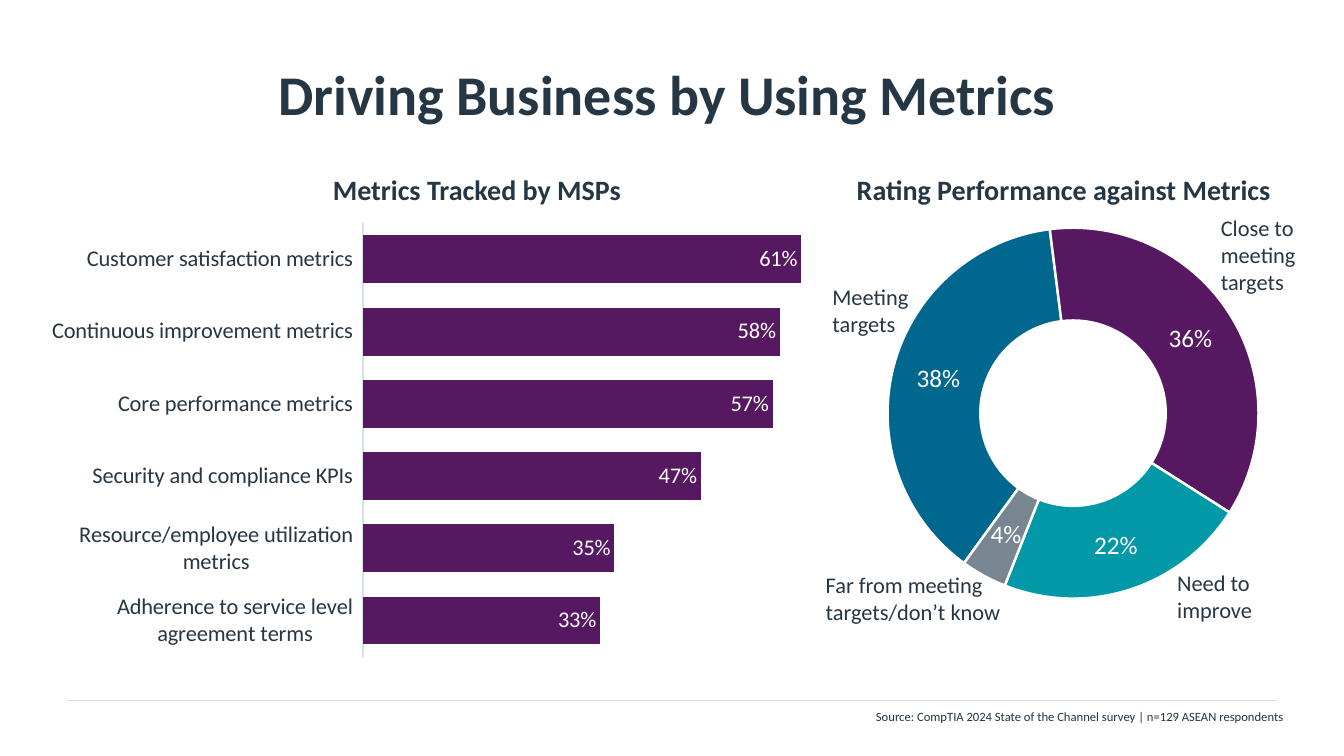
from lxml.etree import SubElement
from pptx import Presentation
from pptx.chart.data import CategoryChartData
from pptx.dml.color import RGBColor
from pptx.enum.chart import XL_CHART_TYPE as CT, XL_LABEL_POSITION as LP, XL_TICK_LABEL_POSITION as TLP
from pptx.enum.chart import XL_TICK_MARK as TM
from pptx.enum.shapes import MSO_CONNECTOR as CONN
from pptx.enum.text import MSO_ANCHOR as ANCHOR, PP_ALIGN as ALIGN
from pptx.oxml.ns import qn
from pptx.util import Inches, Pt

W, H = Inches(13.33), Inches(7.5)
FONT = "Calibri"
INK = RGBColor(0x25, 0x36, 0x44)
PAPER = RGBColor(0xFE, 0xFF, 0xFE)
RULE = RGBColor(0xDA, 0xDF, 0xE1)
AXIS = RGBColor(0xD8, 0xE1, 0xEA)
BAR = RGBColor(0x56, 0x19, 0x61)
BLUE = RGBColor(0x00, 0x68, 0x8E)
PURPLE = RGBColor(0x56, 0x18, 0x61)
TEAL = RGBColor(0x01, 0x98, 0xA7)
GREY = RGBColor(0x77, 0x86, 0x91)

METRICS = {
    "Adherence to service level agreement terms": 0.33,
    "Resource/employee utilization metrics": 0.35,
    "Security and compliance KPIs": 0.47,
    "Core performance metrics": 0.57,
    "Continuous improvement metrics": 0.58,
    "Customer satisfaction metrics": 0.61,
}
# rating, share, slice colour, label box
RATINGS = [
    ("Meeting targets", 0.38, BLUE, (61.2, 36.8, 8.2, 8.53)),
    ("Close to meeting targets", 0.36, PURPLE, (90.1, 27.73, 9.9, 12.13)),
    ("Need to improve", 0.22, TEAL, (86.85, 74.67, 8.2, 8.53)),
    ("Far from meeting targets/don’t know", 0.04, GREY, (60.7, 74.93, 15.6, 8.53)),
]
HEADINGS = {"Metrics Tracked by MSPs": 15.83, "Rating Performance against Metrics": 59.5}


def place(x, y, w, h):
    """Turn percentages of the slide's width and height into lengths."""
    return int(W * x / 100), int(H * y / 100), int(W * w / 100), int(H * h / 100)


def style_font(font, size, color=INK, bold=False):
    for name, value in {"name": FONT, "size": Pt(size), "bold": bold}.items():
        setattr(font, name, value)
    font.color.rgb = color


def add_text(s, text, box, size, align=ALIGN.LEFT, bold=False, **frame):
    tf = s.shapes.add_textbox(*place(*box)).text_frame
    for name, value in {"word_wrap": True, **frame}.items():
        setattr(tf, name, value)
    p = tf.paragraphs[0]
    p.alignment = align
    r = p.add_run()
    r.text = text
    style_font(r.font, size, bold=bold)


def add_rule(s, x1, x2, y):
    left, top, width, _ = place(x1, y, x2 - x1, 0)
    line = s.shapes.add_connector(CONN.STRAIGHT, left, top, left + width, top)
    line.line.color.rgb = RULE
    line.line.width = Pt(0.5)
    SubElement(line._element.spPr, qn("a:effectLst"))


def set_plot_area(chart, x, y, w, h):
    """Fix the inner plot area as shares of the chart."""
    area = chart._chartSpace.chart.plotArea
    for old in area.findall(qn("c:layout")):
        area.remove(old)
    layout = SubElement(area, qn("c:layout"))
    area.insert(0, layout)
    manual = SubElement(layout, qn("c:manualLayout"))
    values = {"layoutTarget": "inner", "xMode": "edge", "yMode": "edge", "x": x, "y": y, "w": w, "h": h}
    for tag, value in values.items():
        SubElement(manual, qn(f"c:{tag}")).set("val", str(value))


def add_percent_chart(s, kind, box, names, values, size, label_size, plot_area):
    data = CategoryChartData(number_format="0%")
    data.categories = names
    data.add_series("Share", values)
    chart = s.shapes.add_chart(kind, *place(*box), data).chart
    chart.has_legend = chart.has_title = False
    style_font(chart.font, size)
    set_plot_area(chart, *plot_area)
    plot = chart.plots[0]
    plot.has_data_labels = True
    labels = plot.data_labels
    for name, value in {"show_value": True, "show_percentage": False,
                        "number_format": "0%", "number_format_is_linked": False}.items():
        setattr(labels, name, value)
    style_font(labels.font, label_size, PAPER)
    return chart


def add_metrics_bars(s, box):
    chart = add_percent_chart(s, CT.BAR_CLUSTERED, box, list(METRICS), list(METRICS.values()),
                              10, 16, (0.41, 0, 0.59, 1))
    plot = chart.plots[0]
    plot.gap_width = 51
    plot.vary_by_categories = False
    plot.data_labels.position = LP.INSIDE_END
    fill = plot.series[0].format.fill
    fill.solid()
    fill.fore_color.rgb = BAR
    cats, vals = chart.category_axis, chart.value_axis
    for name, value in {"major_tick_mark": TM.NONE, "minor_tick_mark": TM.NONE,
                        "tick_label_position": TLP.LOW, "has_major_gridlines": False}.items():
        setattr(cats, name, value)
    style_font(cats.tick_labels.font, 16)
    cats.format.line.color.rgb = AXIS
    cats.format.line.width = Pt(0.75)
    for name, value in {"visible": False, "minimum_scale": 0, "maximum_scale": 0.63,
                        "has_major_gridlines": False}.items():
        setattr(vals, name, value)


def add_ratings_ring(s, box):
    names, shares, colors, label_boxes = zip(*RATINGS)
    chart = add_percent_chart(s, CT.DOUGHNUT, box, names, shares, 11, 18, (0.07, 0.03, 0.9, 0.92))
    plot = chart.plots[0]
    plot.vary_by_categories = True
    for tag, value in {"firstSliceAng": 216, "holeSize": 50}.items():
        plot._element.find(qn(f"c:{tag}")).set("val", str(value))
    for i, color in enumerate(colors):
        form = plot.series[0].points[i].format
        form.fill.solid()
        form.fill.fore_color.rgb = color
        form.line.color.rgb = PAPER
        form.line.width = Pt(1.75)
    for name, label_box in zip(names, label_boxes):
        add_text(s, name, label_box, 16)


def main():
    prs = Presentation()
    prs.slide_width, prs.slide_height = W, H
    s = prs.slides.add_slide(prs.slide_layouts[6])
    s.background.fill.solid()
    s.background.fill.fore_color.rgb = PAPER

    add_rule(s, 5, 95, 92.67)
    add_text(s, "Driving Business by Using Metrics", (5, 4, 90, 16.67), 40, ALIGN.CENTER, True,
             vertical_anchor=ANCHOR.MIDDLE, margin_left=0)
    for heading, x in HEADINGS.items():
        add_text(s, heading, (x, 22.13, 39.3, 5.87), 20, ALIGN.CENTER, True)
    add_metrics_bars(s, (3.6, 29.47, 57.1, 57.47))
    add_ratings_ring(s, (62.64, 28.53, 33.08, 53.33))
    add_text(s, "Source: CompTIA 2024 State of the Channel survey | n=129 ASEAN respondents",
             (47.5, 93.07, 48.7, 3.33), 9, ALIGN.RIGHT)
    prs.save("out.pptx")


if __name__ == "__main__":
    main()
